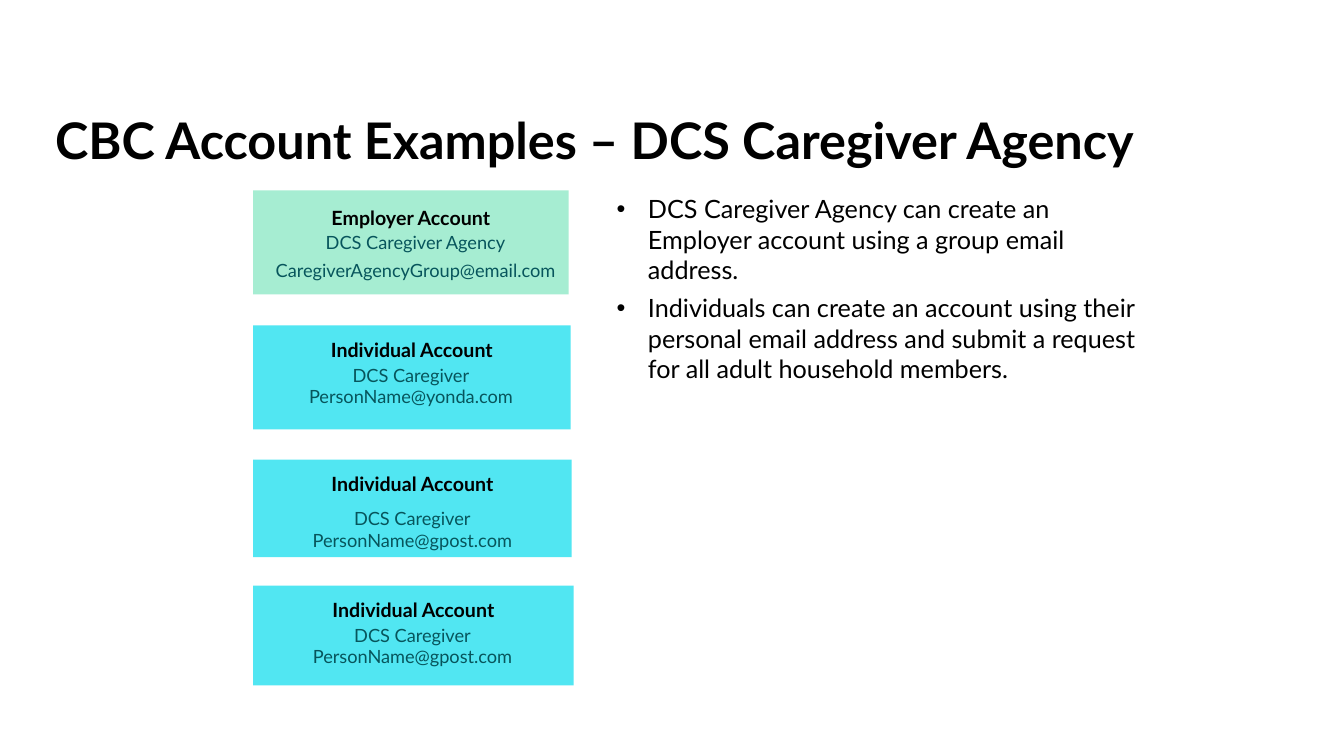
"""Build the slide of account examples for a caregiver agency."""
from pptx import Presentation
from pptx.dml.color import RGBColor
from pptx.enum.shapes import MSO_SHAPE
from pptx.enum.text import MSO_ANCHOR, MSO_AUTO_SIZE, PP_ALIGN
from pptx.util import Cm, Pt

RECTANGLE = MSO_SHAPE.RECTANGLE
TOP, BOTTOM = MSO_ANCHOR.TOP, MSO_ANCHOR.BOTTOM
LEFT, CENTER = PP_ALIGN.LEFT, PP_ALIGN.CENTER
NO_AUTOFIT = MSO_AUTO_SIZE.NONE

BLACK = RGBColor(0x00, 0x00, 0x00)
TEAL = RGBColor(0x07, 0x55, 0x5C)
MINT = RGBColor(0xA6, 0xED, 0xD2)
CYAN = RGBColor(0x51, 0xE6, 0xF2)


def place(sp, left, top, width, height):
    sp.left, sp.top, sp.width, sp.height = Cm(left), Cm(top), Cm(width), Cm(height)


def write(sp, lines, size, color, bold=False, align=CENTER, anchor=TOP,
          spacing=1.0, before=0, margins=(0, 0, 0, 0.13)):
    tf = sp.text_frame
    tf.word_wrap = True
    tf.auto_size = NO_AUTOFIT
    tf.vertical_anchor = anchor
    tf.margin_left, tf.margin_top, tf.margin_right, tf.margin_bottom = map(Cm, margins)
    tf.text = "\n".join(lines)
    for p in tf.paragraphs:
        p.alignment = align
        p.line_spacing = spacing
        p.space_before = Pt(before)
        for r in p.runs:
            r.font.name = "Lato"
            r.font.size = Pt(size)
            r.font.bold = bold
            r.font.color.rgb = color


prs = Presentation()
prs.slide_width, prs.slide_height = Cm(33.87), Cm(19.05)
s = prs.slides.add_slide(prs.slide_layouts[1])

title = s.shapes.title
place(title, 1.14, 1.68, 31.95, 2.62)
write(title, ["CBC Account Examples – DCS Caregiver Agency"], 36, BLACK, bold=True,
      align=LEFT, anchor=BOTTOM, spacing=0.9, margins=(0.25, 0.13, 0.25, 0))

employer = ["DCS Caregiver Agency", "CaregiverAgencyGroup@email.com"]
first_person = ["DCS Caregiver", "PersonName@yonda.com"]
other_person = ["DCS Caregiver", "PersonName@gpost.com"]
accounts = [
    ("Employer Account", MINT, 0.46, (6.38, 4.8, 7.95, 2.62),
     employer, (6.71, 5.77, 7.52, 0.86)),
    ("Individual Account", CYAN, 0.38, (6.38, 8.2, 8, 2.62),
     first_person, (6.38, 9.17, 7.95, 0.99)),
    ("Individual Account", CYAN, 0.38, (6.38, 11.58, 8.03, 2.46),
     other_person, (6.4, 12.78, 7.98, 1.22)),
    ("Individual Account", CYAN, 0.38, (6.38, 14.76, 8.08, 2.51),
     other_person, (6.38, 15.72, 8.03, 1.24)),
]
for heading, fill, inset, card_box, details, details_box in accounts:
    card = s.shapes.add_shape(RECTANGLE, *map(Cm, card_box))
    card.shadow.inherit = False
    card.fill.solid()
    card.fill.fore_color.rgb = fill
    card.line.fill.background()
    write(card, [heading], 14, BLACK, bold=True, spacing=0.9, before=10,
          margins=(0, inset, 0, 0.13))

    tb = s.shapes.add_textbox(*map(Cm, details_box))
    if details is employer:
        write(tb, details, 13, TEAL, spacing=0.9, before=6, margins=(0, 0.13, 0, 0.13))
    else:
        write(tb, details, 13, TEAL)

body = s.placeholders[1]
place(body, 15.29, 4.75, 13.89, 5.08)
write(body, [
    "DCS Caregiver Agency can create an Employer account using a group email address.",
    "Individuals can create an account using their personal email address and "
    "submit a request for all adult household members.",
], 18, BLACK, align=LEFT, before=6, margins=(0.25, 0.13, 0.25, 0.13))
for p in body.text_frame.paragraphs:
    pPr = p._p.get_or_add_pPr()
    pPr.set("marL", str(Cm(0.79)))
    pPr.set("indent", str(-Cm(0.79)))

prs.save("out.pptx")
